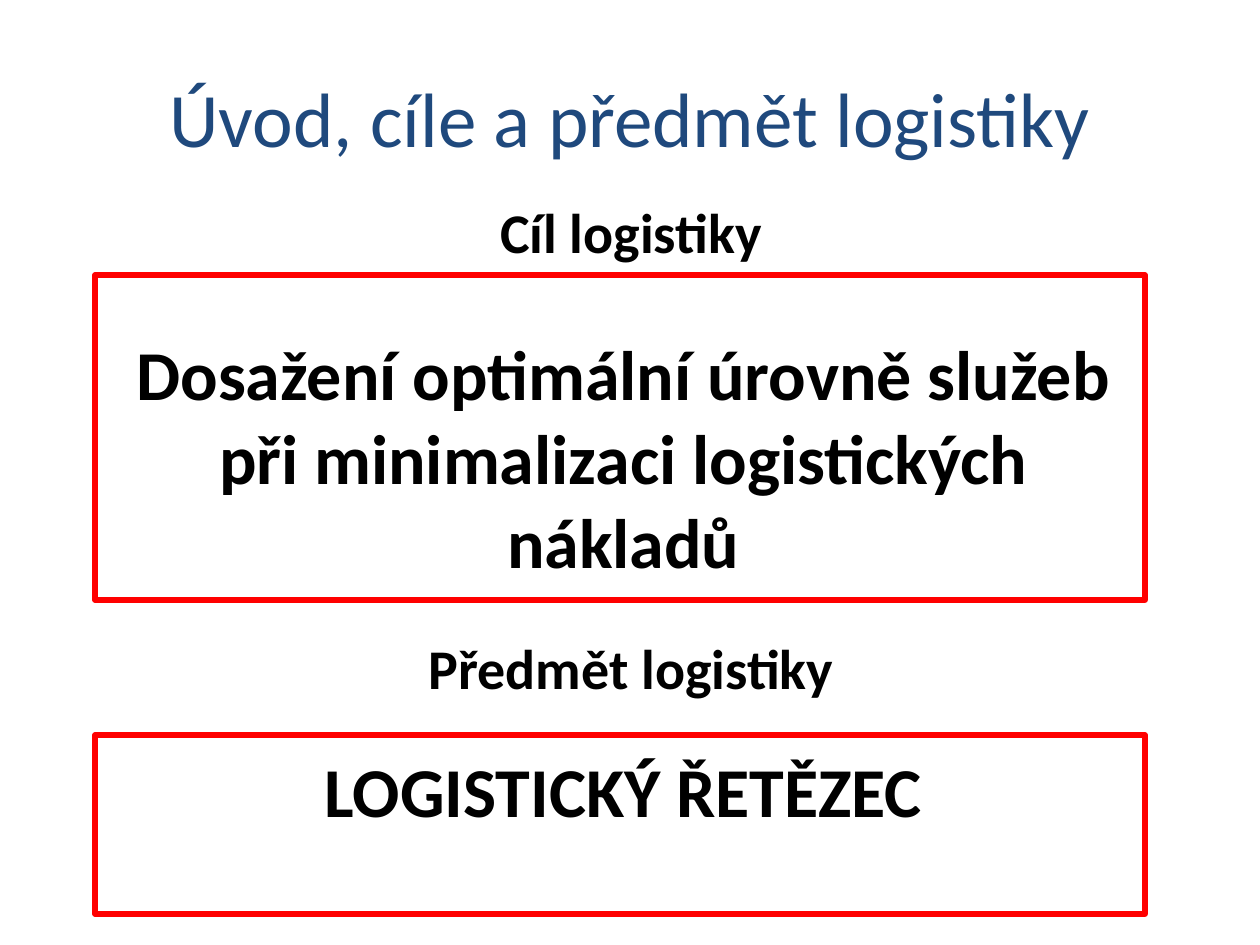
import pptx
import pptx.dml.color
import pptx.enum.shapes
import pptx.enum.text
import pptx.util

EMU_PER_PX = 914400 / 126
TITLE_ONLY = 5

# Colours, font and type sizes
THEME = {
    "font": "Calibri",
    "title": {"color": "1F497D", "size": 44, "bold": False},
    "heading": {"color": "000000", "size": 32, "bold": True},
    "statement": {"color": "000000", "size": 40, "bold": True},
    "frame": {"color": "FF0000", "width": 3},
}

# Heading, heading top, frame top and height, statement, statement top and height
SECTIONS = [
    ("Cíl logistiky", 185, 275, 325,
     "Dosažení optimální úrovně služeb při minimalizaci logistických nákladů", 324, 276),
    ("Předmět logistiky", 621, 735, 179, "LOGISTICKÝ ŘETĚZEC", 741, 149),
]


def px(length):
    return pptx.util.Emu(round(length * EMU_PER_PX))


def rgb(color):
    return pptx.dml.color.RGBColor.from_string(color)


def set_attributes(target, values):
    for attribute, value in values.items():
        setattr(target, attribute, value)


def write_text(holder, text, role, anchor, left_inset=13):
    """Fill a shape's text frame with one centred paragraph."""
    style = THEME[role]
    frame = holder.text_frame
    set_attributes(frame, {
        "word_wrap": True,
        "auto_size": pptx.enum.text.MSO_AUTO_SIZE.NONE,
        "vertical_anchor": anchor,
        "margin_left": px(left_inset),
    })
    paragraph = frame.paragraphs[0]
    paragraph.alignment = pptx.enum.text.PP_ALIGN.CENTER
    run = paragraph.add_run()
    run.text = text
    set_attributes(run.font, {
        "name": THEME["font"],
        "size": pptx.util.Pt(style["size"]),
        "bold": style["bold"],
    })
    run.font.color.rgb = rgb(style["color"])


def add_title(slide, text):
    title = slide.shapes.title
    set_attributes(title, {
        "left": px(63), "top": px(38), "width": px(1134), "height": px(158),
    })
    write_text(title, text, "title", pptx.enum.text.MSO_ANCHOR.MIDDLE)


def add_frame(slide, top, height):
    frame = slide.shapes.add_shape(
        pptx.enum.shapes.MSO_SHAPE.RECTANGLE, px(95), px(top), px(1050), px(height))
    frame.shadow.inherit = False
    frame.fill.background()
    frame.line.color.rgb = rgb(THEME["frame"]["color"])
    frame.line.width = pptx.util.Pt(THEME["frame"]["width"])


def add_heading(slide, text, top):
    heading = slide.shapes.add_textbox(px(64), px(top), px(1134), px(92))
    write_text(heading, text, "heading", pptx.enum.text.MSO_ANCHOR.MIDDLE)


def add_statement(slide, text, top, height):
    statement = slide.shapes.add_textbox(px(64), px(top), px(1071), px(height))
    write_text(statement, text, "statement", pptx.enum.text.MSO_ANCHOR.TOP, left_inset=60)


def main():
    deck = pptx.Presentation()
    set_attributes(deck, {"slide_width": px(1260), "slide_height": px(945)})
    slide = deck.slides.add_slide(deck.slide_layouts[TITLE_ONLY])

    add_title(slide, "Úvod, cíle a předmět logistiky")

    # Each section: a heading above a framed statement
    for heading, heading_top, frame_top, frame_height, statement, top, height in SECTIONS:
        add_frame(slide, frame_top, frame_height)
        add_heading(slide, heading, heading_top)
        add_statement(slide, statement, top, height)

    deck.save("out.pptx")


if __name__ == "__main__":
    main()
